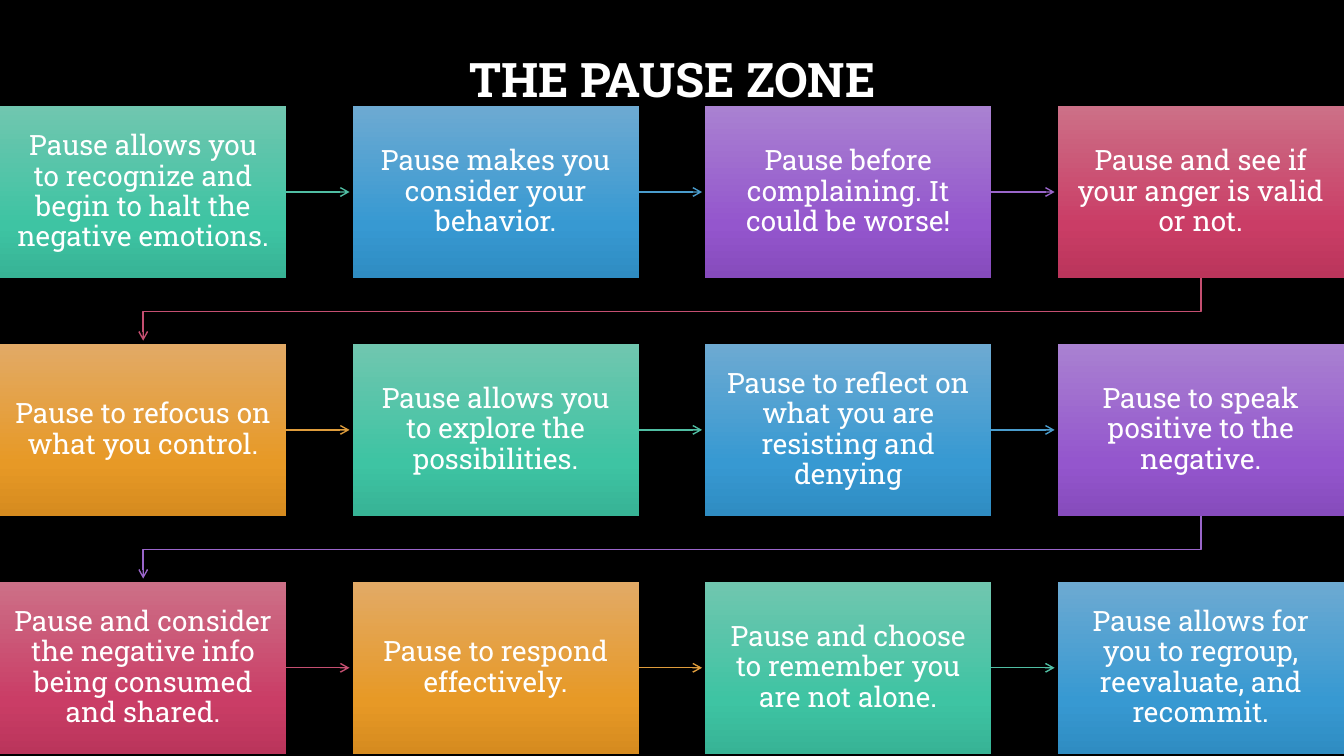
from copy import deepcopy

from lxml import etree
from pptx import Presentation
from pptx import util as u
from pptx.dml.color import RGBColor
from pptx.enum import shapes, text
from pptx.oxml.ns import qn

WIDTH, HEIGHT = 13.33, 7.5
BOX_WIDTH, BOX_HEIGHT = 2.84, 1.71
COLUMNS = 4
TOP, ROW_STEP = 1.05, 2.36
COLUMN_STEP = (WIDTH - BOX_WIDTH) / (COLUMNS - 1)
ARROW_GAP = 0.03

GREEN = (("70C6AF", "3EC4A3", "37B395"), "50BEA3")
BLUE = (("6DAAD2", "3799D2", "2F8CC2"), "4A9CCC")
PURPLE = (("A981D1", "9456CD", "864BBC"), "9A66CA")
RED = (("CC7087", "CA3D66", "BA355B"), "C54F71")
ORANGE = (("E2AA66", "E79926", "D68B1F"), "DE9C3C")
THEMES = [GREEN, BLUE, PURPLE, RED, ORANGE]

STEPS = [
    "Pause allows you to recognize and begin to halt the negative emotions.",
    "Pause makes you consider your behavior.",
    "Pause before complaining. It could be worse!",
    "Pause and see if your anger is valid or not.",
    "Pause to refocus on what you control.",
    "Pause allows you to explore the possibilities.",
    "Pause to reflect on what you are resisting and denying",
    "Pause to speak positive to the negative.",
    "Pause and consider the negative info being consumed and shared.",
    "Pause to respond effectively.",
    "Pause and choose to remember you are not alone.",
    "Pause allows for you to regroup, reevaluate, and recommit.",
]


def color(value):
    return RGBColor.from_string(value)


class PauseSlide:
    font = "Roboto Slab"
    ink = "FFFFFF"
    stops = (0, 0.69, 1)

    def __init__(self, deck):
        self.page = deck.slides.add_slide(deck.slide_layouts[5])
        self.page.background.fill.solid()
        self.page.background.fill.fore_color.rgb = color("000000")

    def set_words(self, frame, words, size, bold=False):
        frame.word_wrap = True
        frame.auto_size = text.MSO_AUTO_SIZE.NONE
        frame.vertical_anchor = text.MSO_ANCHOR.MIDDLE
        para = frame.paragraphs[0]
        para.text = words
        para.alignment = text.PP_ALIGN.CENTER
        para.line_spacing = 0.9
        para.space_before = u.Pt(0)
        para.font.name = self.font
        para.font.size = u.Pt(size)
        para.font.bold = bold
        para.font.color.rgb = color(self.ink)

    def title(self, words, left, top, width, height):
        box = self.page.shapes.title
        box.left, box.top = u.Inches(left), u.Inches(top)
        box.width, box.height = u.Inches(width), u.Inches(height)
        self.set_words(box.text_frame, words, 34, bold=True)

    def box(self, words, left, top, shades):
        box = self.page.shapes.add_shape(
            shapes.MSO_SHAPE.RECTANGLE, u.Inches(left), u.Inches(top),
            u.Inches(BOX_WIDTH), u.Inches(BOX_HEIGHT))
        box.shadow.inherit = False
        box.line.fill.background()
        box.fill.gradient()
        box.fill.gradient_angle = 270
        stop_list = next(box._element.spPr.iter(qn("a:gsLst")))
        stop_list.append(deepcopy(stop_list[0]))
        for stop, position, shade in zip(box.fill.gradient_stops, self.stops, shades):
            stop.position = position
            stop.color.rgb = color(shade)
        frame = box.text_frame
        frame.margin_left = frame.margin_right = u.Inches(0.14)
        frame.margin_top = frame.margin_bottom = u.Inches(0.15)
        self.set_words(frame, words, 20)
        return box

    def style_arrow(self, arrow, shade):
        arrow.line.color.rgb = color(shade)
        arrow.line.width = u.Pt(1)
        line = arrow.line._get_or_add_ln()
        etree.SubElement(line, qn("a:tailEnd"), type="arrow")

    def arrow(self, box, left, top, shade):
        middle = u.Inches(top + BOX_HEIGHT / 2)
        arrow = self.page.shapes.add_connector(
            shapes.MSO_CONNECTOR.STRAIGHT, u.Inches(left + BOX_WIDTH), middle,
            u.Inches(left + COLUMN_STEP - ARROW_GAP), middle)
        arrow.begin_connect(box, 3)
        self.style_arrow(arrow, shade)
        etree.SubElement(arrow._element.spPr, qn("a:effectLst"))

    def return_arrow(self, left, top, shade):
        start, finish = left + BOX_WIDTH / 2, BOX_WIDTH / 2
        bottom = top + BOX_HEIGHT
        bend = bottom + 0.33
        corners = [(start, bend), (finish, bend), (finish, top + ROW_STEP - ARROW_GAP)]
        route = self.page.shapes.build_freeform(u.Inches(start), u.Inches(bottom))
        route.add_line_segments(
            [(u.Inches(x), u.Inches(y)) for x, y in corners], close=False)
        arrow = route.convert_to_shape()
        arrow.shadow.inherit = False
        arrow.fill.background()
        self.style_arrow(arrow, shade)


def main():
    deck = Presentation()
    deck.slide_width, deck.slide_height = u.Inches(WIDTH), u.Inches(HEIGHT)
    slide = PauseSlide(deck)
    slide.title("THE PAUSE ZONE", 1.01, 0.09, 11.32, 1.45)
    for index, words in enumerate(STEPS):
        row, column = divmod(index, COLUMNS)
        left, top = column * COLUMN_STEP, TOP + row * ROW_STEP
        shades, arrow_shade = THEMES[index % len(THEMES)]
        box = slide.box(words, left, top, shades)
        if column < COLUMNS - 1:
            slide.arrow(box, left, top, arrow_shade)
        elif index < len(STEPS) - 1:
            slide.return_arrow(left, top, arrow_shade)
    deck.save("out.pptx")


if __name__ == "__main__":
    main()
